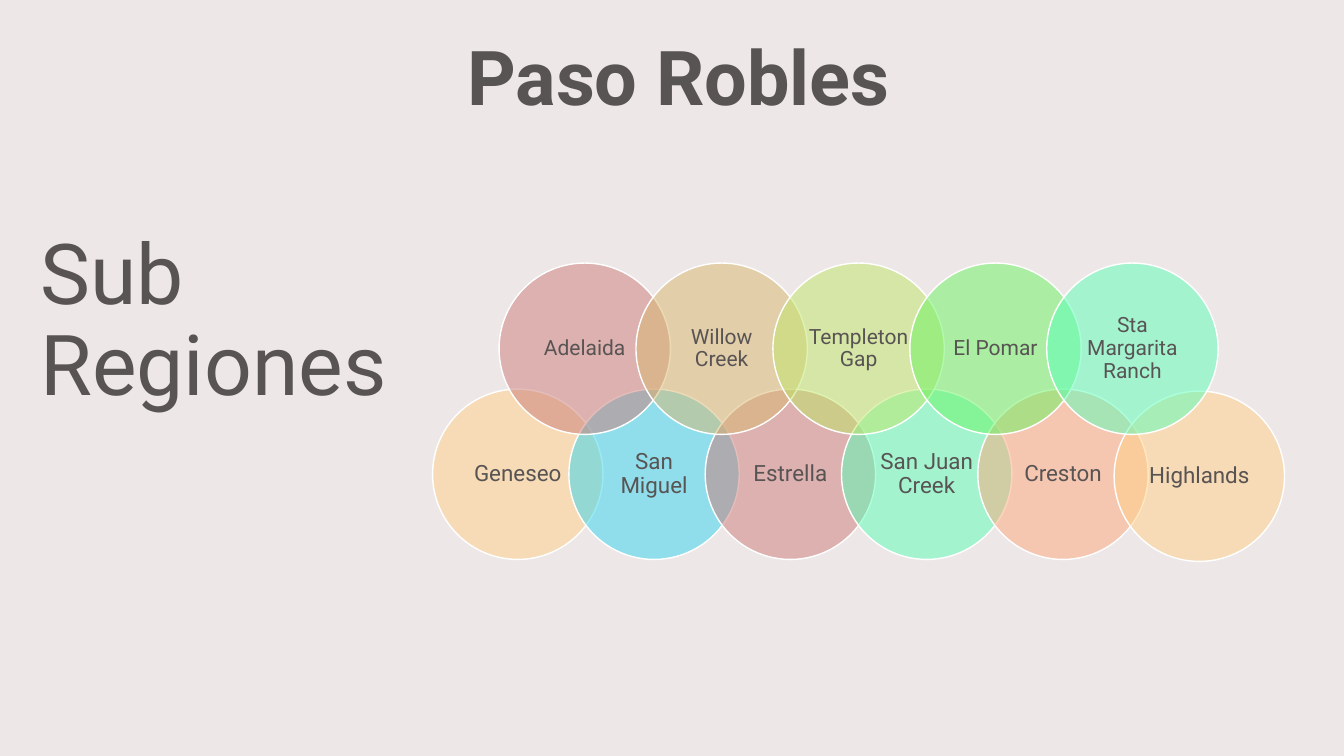
from pptx import Presentation
from pptx.dml.color import RGBColor
from pptx.enum.shapes import MSO_SHAPE
from pptx.enum.text import MSO_ANCHOR, MSO_AUTO_SIZE, PP_ALIGN
from pptx.oxml.ns import qn
from pptx.util import Inches, Pt
from lxml.etree import SubElement

INK = "595454"
LOWER = [("Geneseo", "FFD186"), ("San Miguel", "33D6F1"), ("Estrella", "CB7C78"),
         ("San Juan Creek", "59FFB9"), ("Creston", "FDA97D"), ("Highlands", "FFD186")]
UPPER = [("Adelaida", "CB7C78"), ("Willow Creek", "D9B76F"), ("Templeton Gap", "BFE667"),
         ("El Pomar", "68F360"), ("Sta Margarita Ranch", "59FFB9")]


def paint(fill, color):
    """Give a fill or a font a solid colour from a hex string."""
    fill.solid()
    fill.fore_color.rgb = RGBColor.from_string(color)


def place(shape, left, top, width, height):
    """Set the position and size of a shape in inches."""
    shape.left, shape.top = Inches(left), Inches(top)
    shape.width, shape.height = Inches(width), Inches(height)


def write(shape, text, size, align, anchor, bold=False, pad=(0, 0)):
    """Write one styled paragraph into a shape."""
    frame = shape.text_frame
    frame.text = text
    frame.word_wrap = True
    frame.auto_size = MSO_AUTO_SIZE.NONE
    frame.vertical_anchor = anchor
    frame.margin_left = frame.margin_right = Inches(pad[0])
    frame.margin_top = frame.margin_bottom = Inches(pad[1])
    para = frame.paragraphs[0]
    para.alignment = align
    para.line_spacing = 0.9
    font = para.runs[0].font
    font.name, font.size, font.bold = "Roboto", Pt(size), bold
    paint(font.fill, INK)


def add_ring(slide, left, top, side, text, color, size):
    """Add a half-transparent circle with its label."""
    ring = slide.shapes.add_shape(MSO_SHAPE.OVAL, Inches(left), Inches(top),
                                  Inches(side), Inches(side))
    ring.shadow.inherit = False
    paint(ring.fill, color)
    tint = ring.element.spPr.find(qn("a:solidFill"))[0]
    SubElement(tint, qn("a:alpha")).set("val", "50000")
    paint(ring.line.fill, "FFFFFF")
    ring.line.width = Pt(1)
    write(ring, text, size, PP_ALIGN.CENTER, MSO_ANCHOR.MIDDLE, pad=(0.09, 0.02))


def add_row(slide, items, left, top, side, step, size):
    """Add a row of overlapping circles."""
    for i, (text, color) in enumerate(items):
        drop = 0.02 if text == "Highlands" else 0
        add_ring(slide, left + i * step, top + drop, side, text, color, size)


def main():
    """Build and save the slide."""
    deck = Presentation()
    deck.slide_width, deck.slide_height = Inches(13.33), Inches(7.5)
    slide = deck.slides.add_slide(deck.slide_layouts[5])
    paint(slide.background.fill, "EEE7E7")
    title = slide.shapes.title
    place(title, 0.4, 1.7, 4.34, 3)
    write(title, "Sub Regiones", 60, PP_ALIGN.LEFT, MSO_ANCHOR.MIDDLE)
    head = slide.shapes.add_textbox(Inches(0.4), Inches(0.4), Inches(12.66), Inches(1))
    write(head, "Paso Robles", 54, PP_ALIGN.CENTER, MSO_ANCHOR.TOP, bold=True)
    add_row(slide, LOWER, 4.29, 3.86, 1.69, 1.352, 16)
    add_row(slide, UPPER, 4.95, 2.61, 1.7, 1.358, 15)
    deck.save("out.pptx")


if __name__ == "__main__":
    main()
